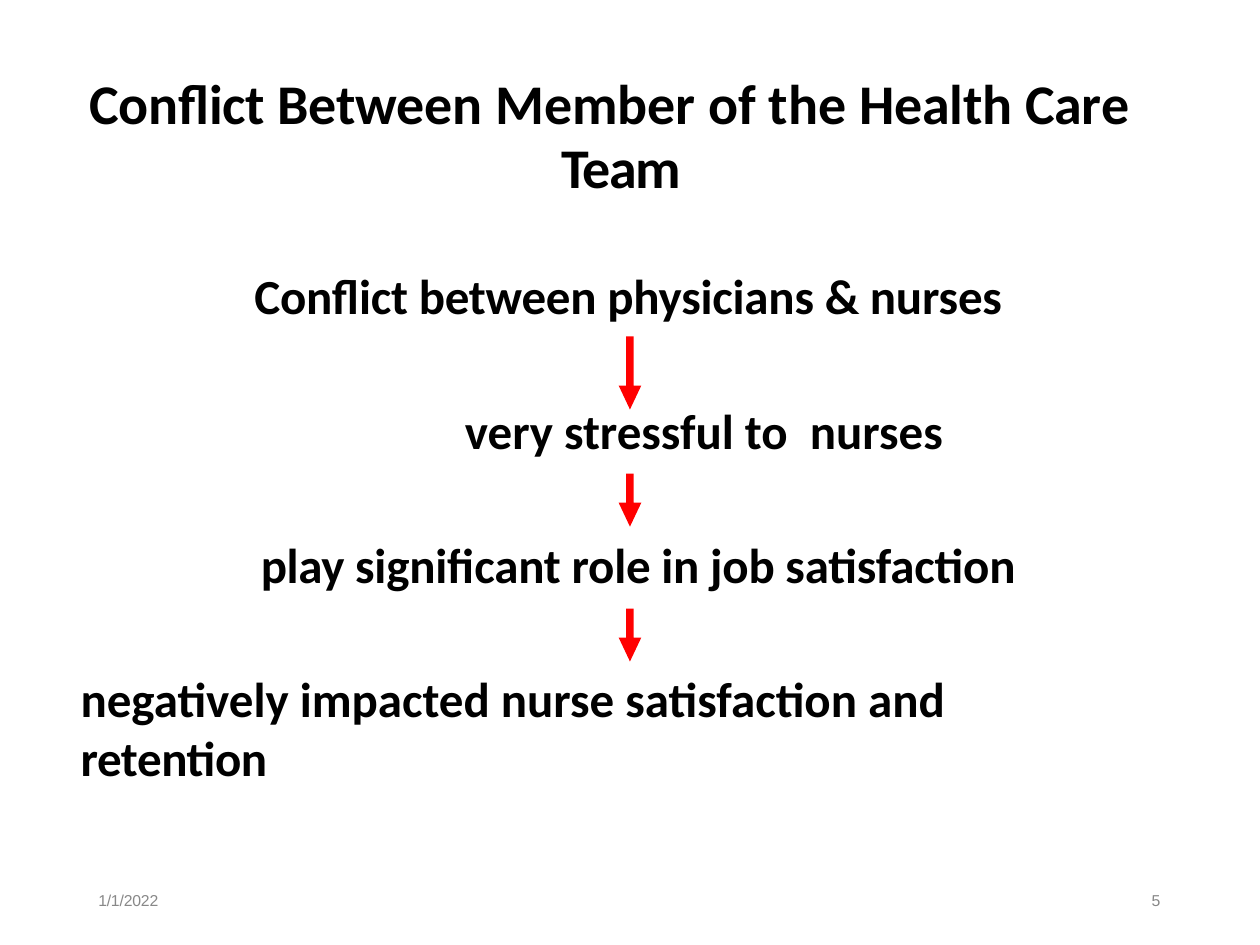
from pptx import Presentation
from pptx.dml.color import RGBColor
from pptx.enum.text import PP_ALIGN as Align
from pptx.util import Inches, Pt

INK, RED, GREY = "000000", "FF0000", "888888"


def color(code):
    return RGBColor.from_string(code)


class Deck:
    def __init__(self, slide):
        self.slide = slide

    def box(self, left, top, width, height, inset=0):
        shape = self.slide.shapes.add_textbox(
            Inches(left), Inches(top), Inches(width), Inches(height))
        frame = shape.text_frame
        frame.word_wrap = True
        frame.margin_left = frame.margin_right = frame.margin_bottom = 0
        frame.margin_top = Inches(inset)
        return frame

    def para(self, frame, runs, size, font="Calibri", ink=INK, bold=True,
             align=Align.LEFT, left=0, first=0, right=0, before=0, line=None):
        """Add a paragraph of (text, letter spacing in points) runs."""
        para = frame.paragraphs[0]
        if para.runs:
            para = frame.add_paragraph()
        para.alignment = align
        para.space_before = Pt(before)
        if line:
            para.line_spacing = line
        props = para._p.get_or_add_pPr()
        for key, value in (("marL", left), ("marR", right), ("indent", first)):
            props.set(key, str(Inches(value)))
        for text, gap in runs:
            run = para.add_run()
            run.text = text
            run.font.name = font
            run.font.size = Pt(size)
            run.font.bold = bold
            run.font.color.rgb = color(ink)
            if gap:
                run._r.get_or_add_rPr().set("spc", str(round(gap * 100)))

    def note(self, text, left, width, indent, gap=0):
        frame = self.box(left, 7.07, width, 0.17)
        self.para(frame, [(text, gap)], 9, "Arial", GREY, False, left=indent)

    def arrow(self, mid, top, height, stem=0.03, wing=0.09, head=0.19):
        """Draw a downward arrow centred on mid; stem and wing are half widths."""
        neck, tip = top + height - head, top + height
        points = [(mid - stem, top), (mid + stem, top), (mid + stem, neck),
                  (mid + wing, neck), (mid, tip), (mid - wing, neck),
                  (mid - stem, neck)]
        points = [(Inches(x), Inches(y)) for x, y in points]
        path = self.slide.shapes.build_freeform(*points[0])
        path.add_line_segments(points[1:], close=True)
        shape = path.convert_to_shape()
        shape.shadow.inherit = False
        shape.fill.solid()
        shape.fill.fore_color.rgb = color(RED)
        shape.line.fill.background()


def main():
    show = Presentation()
    show.slide_width, show.slide_height = Inches(10), Inches(7.5)
    deck = Deck(show.slides.add_slide(show.slide_layouts[6]))

    title = deck.box(0.67, 0.54, 8.33, 1.04, 0.03)
    deck.para(title, [("Conflict Between Member", -0.1), (" of the ", 0),
                      ("Health Care", -0.1)],
              32, align=Align.CENTER, line=Pt(36.5))
    deck.para(title, [("Team", -0.8)], 32, align=Align.CENTER, left=0.19,
              line=Pt(36.5))

    body = deck.box(0.63, 2.09, 8.5, 3.68, 0.02)
    deck.para(body, [("Conflict between physicians & nurses", -0.1)], 28,
              align=Align.CENTER, left=0.21)
    deck.para(body, [("very stressful to  nurses ", 0), ("play ", -0.2),
                     ("significant role in job satisfaction", -0.1)],
              28, left=1.44, first=1.62, right=1, line=2.28)
    deck.para(body, [("negatively impacted nurse satisfaction and ", 0),
                     ("retention", -0.2)],
              28, left=0.01, right=1, before=43)

    for top, height in ((2.67, 0.58), (3.76, 0.42), (4.83, 0.42)):
        deck.arrow(5, top, height)

    deck.note("1/1/2022", 0.77, 0.52, 0.01, -0.1)
    deck.note("5", 9.1, 0.15, 0.04)
    show.save("out.pptx")


if __name__ == "__main__":
    main()
